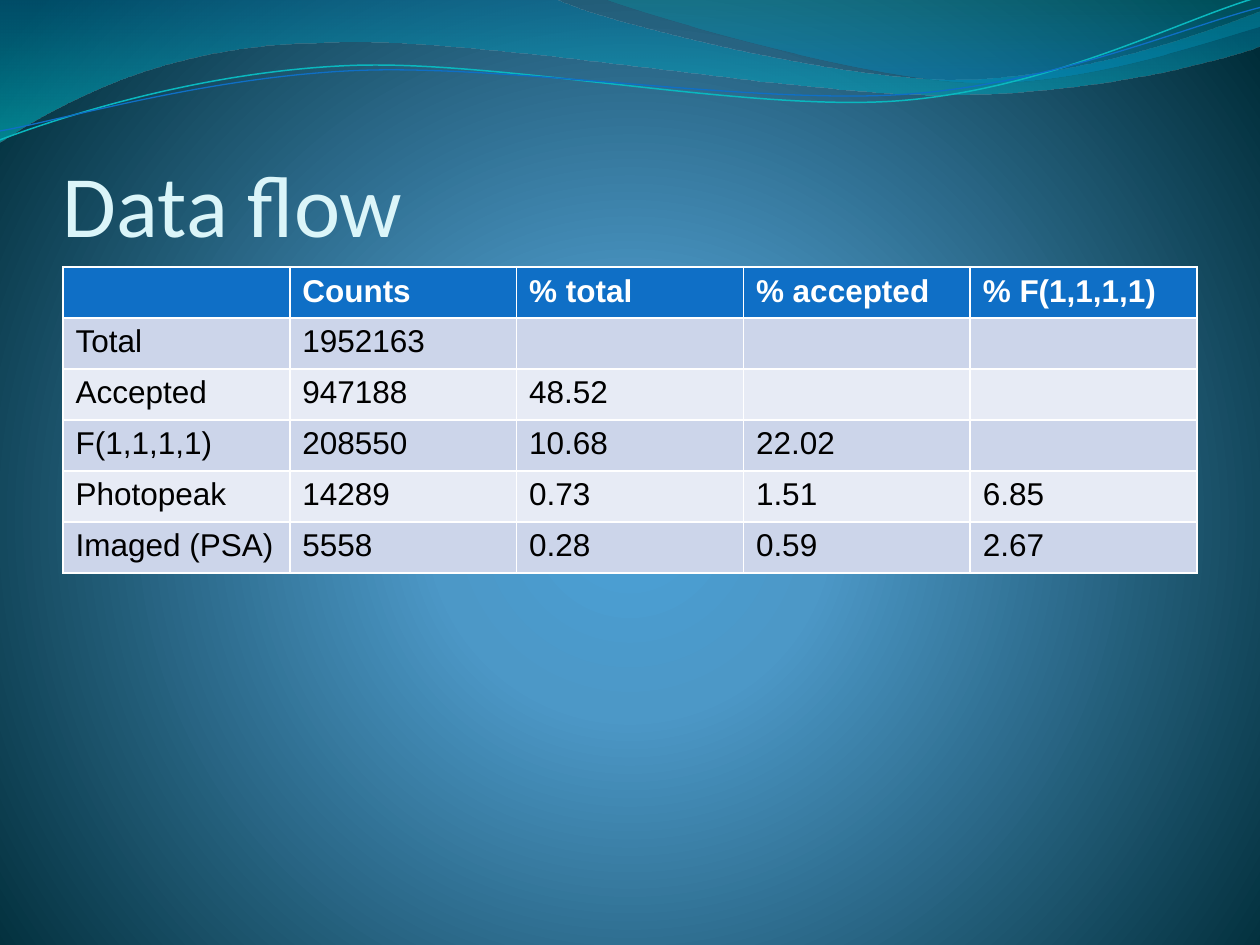
from dataclasses import dataclass
from math import cos, radians, sin

from lxml.etree import SubElement
from pptx import Presentation
from pptx.dml.color import RGBColor as RGB
from pptx.enum.text import MSO_ANCHOR as ANCHOR
from pptx.oxml import parse_xml
from pptx.oxml.ns import nsdecls, qn
from pptx.util import Inches, Pt


@dataclass(frozen=True)
class Theme:
    title_font: str = "Calibri"
    body_font: str = "Arial"
    title_size: int = 50
    body_size: int = 18
    title: str = "DBF5F9"
    header: str = "0F6FC6"
    band_dark: str = "CCD5EA"
    band_light: str = "E7EBF5"
    text: str = "000000"
    white: str = "FFFFFF"
    teal: str = "0AB8BF"
    glow: tuple = ((0, "4AA0D6", 100), (25, "4C98C7", 100), (100, "002C38", 100))
    wave: tuple = ((0, "0074A1", 45), (100, "00C6CF", 55))
    corner: tuple = ((0, "00A1A9", 30), (80, "008BBF", 45))


THEME = Theme()
DOWNWARD = '<a:lin ang="5400000" scaled="1"/>'
CIRCULAR = ('<a:path path="circle"><a:fillToRect l="10000" t="110000" '
            'r="10000" b="100000"/></a:path>')
TILT = 357.3

WAVE = [(0, -0.01), (4.4, -0.01),
        (4.76, 0.17, 6.64, 0.63, 7.58, 0.63), (8.53, 0.63, 9.58, 0.26, 10, 0.09),
        (10.01, 0.36),
        (9.83, 0.44, 8.7, 0.76, 7.46, 0.75), (6.22, 0.75, 3.82, 0.28, 2.57, 0.34),
        (1.29, 0.35, 0.46, 0.83, -0.01, 1.13)]
CORNER = [(4.79, -0.01),
          (5.09, 0.11, 6.82, 0.62, 7.69, 0.65), (8.56, 0.69, 9.61, 0.32, 10, 0.21),
          (10, 0)]
TEAL_LINE = [(0, 1.11),
             (0.48, 0.93, 1.58, 0.57, 2.77, 0.52), (3.95, 0.47, 5.93, 0.89, 7.13, 0.8),
             (8.33, 0.71, 9.38, 0.15, 9.98, -0.02)]
BLUE_LINE = [(0, 1.04),
             (0.47, 0.96, 1.64, 0.61, 2.83, 0.56), (4.03, 0.51, 5.97, 0.83, 7.17, 0.75),
             (8.36, 0.67, 9.41, 0.21, 10, 0.06)]

ROWS = [
    ("", "Counts", "% total", "% accepted", "% F(1,1,1,1)"),
    ("Total", "1952163", "", "", ""),
    ("Accepted", "947188", "48.52", "", ""),
    ("F(1,1,1,1)", "208550", "10.68", "22.02", ""),
    ("Photopeak", "14289", "0.73", "1.51", "6.85"),
    ("Imaged (PSA)", "5558", "0.28", "0.59", "2.67"),
]


def set_gradient(fill, element, stops, shade):
    fill.solid()
    solid = element.find(".//" + qn("a:solidFill"))
    marks = "".join(
        f'<a:gs pos="{pos * 1000}"><a:srgbClr val="{color}">'
        f'<a:alpha val="{alpha * 1000}"/></a:srgbClr></a:gs>'
        for pos, color, alpha in stops)
    gradient = parse_xml(f'<a:gradFill {nsdecls("a")} rotWithShape="1">'
                         f'<a:gsLst>{marks}</a:gsLst>{shade}</a:gradFill>')
    solid.getparent().replace(solid, gradient)


def rotate(x, y, center, degrees):
    dx, dy = x - center[0], y - center[1]
    c, n = cos(radians(degrees)), sin(radians(degrees))
    return center[0] + dx * c - dy * n, center[1] + dx * n + dy * c


def bend_segments(sp, outline):
    lines = iter(sp.element.findall(".//" + qn("a:lnTo")))
    for seg in outline[1:]:
        line = next(lines)
        if len(seg) == 6:
            curve = SubElement(line.getparent(), qn("a:cubicBezTo"))
            line.addprevious(curve)
            for part in (line, next(lines), next(lines)):
                curve.append(part[0])
                part.getparent().remove(part)


def add_outline(s, outline, close, center=(0, 0), rotation=0):
    points = [rotate(*seg[i:i + 2], center, -rotation)
              for seg in outline for i in range(0, len(seg), 2)]
    start, *rest = [(Inches(x), Inches(y)) for x, y in points]
    builder = s.shapes.build_freeform(*start)
    builder.add_line_segments(rest, close=close)
    sp = builder.convert_to_shape()
    bend_segments(sp, outline)
    sp.rotation = rotation
    sp.shadow.inherit = False
    return sp


def add_wave(s, outline, stops):
    sp = add_outline(s, outline, True)
    set_gradient(sp.fill, sp.element, stops, DOWNWARD)
    sp.line.fill.background()


def add_curve(s, outline, center, color, width):
    sp = add_outline(s, outline, False, center, TILT)
    sp.fill.background()
    sp.line.color.rgb = RGB.from_string(color)
    sp.line.width = Pt(width)


def style_font(font, name, size, color, bold=False):
    font.name = name
    font.size = Pt(size)
    font.bold = bold
    font.color.rgb = RGB.from_string(color)


def add_title(s, text):
    tf = s.shapes.add_textbox(Inches(0.5), Inches(0.77),
                              Inches(9), Inches(1.25)).text_frame
    tf.word_wrap = True
    tf.vertical_anchor = ANCHOR.BOTTOM
    tf.margin_left = tf.margin_right = tf.margin_bottom = 0
    tf.margin_top = Inches(0.05)
    tf.text = text
    style_font(tf.paragraphs[0].runs[0].font, THEME.title_font,
               THEME.title_size, THEME.title)


def style_cell(cell, row, text):
    header = row == 0
    band = THEME.band_dark if row % 2 else THEME.band_light
    cell.fill.solid()
    cell.fill.fore_color.rgb = RGB.from_string(THEME.header if header else band)
    cell.text = text
    for r in cell.text_frame.paragraphs[0].runs:
        style_font(r.font, THEME.body_font, THEME.body_size,
                   THEME.white if header else THEME.text, header)


def add_data_table(s, rows):
    table = s.shapes.add_table(len(rows), len(rows[0]), Inches(0.5), Inches(2.12),
                               Inches(9), Inches(2.43)).table
    for row, values in enumerate(rows):
        for col, text in enumerate(values):
            style_cell(table.cell(row, col), row, text)


def main():
    prs = Presentation()
    prs.slide_width, prs.slide_height = Inches(10), Inches(7.5)
    s = prs.slides.add_slide(prs.slide_layouts[6])
    set_gradient(s.background.fill, s.element, THEME.glow, CIRCULAR)
    add_wave(s, WAVE, THEME.wave)
    add_wave(s, CORNER, THEME.corner)
    add_curve(s, TEAL_LINE, (4.99, 0.58), THEME.teal, 0.85)
    add_curve(s, BLUE_LINE, (5, 0.59), THEME.header, 0.75)
    add_title(s, "Data flow")
    add_data_table(s, ROWS)
    prs.save("out.pptx")


if __name__ == "__main__":
    main()
